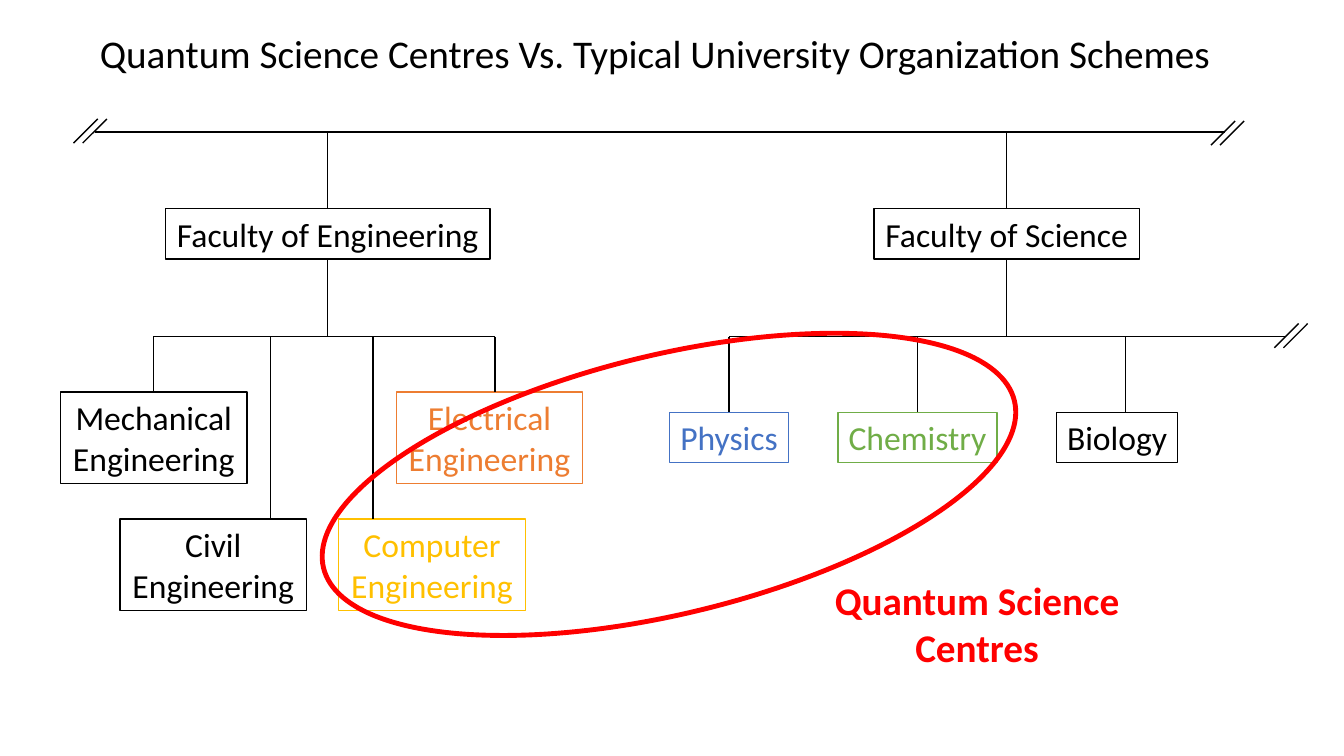
from lxml.etree import SubElement
from pptx import Presentation
from pptx.dml.color import RGBColor
from pptx.enum.shapes import MSO_CONNECTOR, MSO_SHAPE
from pptx.enum.text import MSO_ANCHOR, MSO_AUTO_SIZE, PP_ALIGN
from pptx.oxml.ns import qn
from pptx.util import Inches, Pt

BLACK, RED = "000000", "FF0000"
TOP, BOTTOM = 0, 2
UNIVERSITY_Y, FACULTY_Y, DEPARTMENT_Y = 1.31, 2.07, 3.34


def write(shape, text, size, color, align=PP_ALIGN.CENTER, bold=False, wrap=True):
    frame = shape.text_frame
    frame.text = text
    settings = {"word_wrap": wrap, "auto_size": MSO_AUTO_SIZE.NONE,
                "vertical_anchor": MSO_ANCHOR.TOP}
    for name, value in settings.items():
        setattr(frame, name, value)
    paragraph = frame.paragraphs[0]
    paragraph.alignment = align
    for name, value in {"name": "Calibri", "size": Pt(size), "bold": bold}.items():
        setattr(paragraph.font, name, value)
    paragraph.font.color.rgb = RGBColor.from_string(color)


def add_line(x1, y1, x2, y2):
    line = slide.shapes.add_connector(
        MSO_CONNECTOR.STRAIGHT, *[Inches(value) for value in (x1, y1, x2, y2)])
    line.line.color.rgb = RGBColor.from_string(BLACK)
    line.line.width = Pt(1)
    SubElement(line._element.spPr, qn("a:effectLst"))
    return line


presentation = Presentation()
presentation.slide_width, presentation.slide_height = Inches(13.33), Inches(7.5)
slide = presentation.slides.add_slide(presentation.slide_layouts[5])

title = slide.shapes.title
title.left, title.top = Inches(0.89), Inches(0.24)
title.width, title.height = Inches(11.33), Inches(0.57)
write(title, "Quantum Science Centres Vs. Typical University Organization Schemes",
      28, BLACK, align=PP_ALIGN.LEFT, wrap=False)

# Units: name, left, top, width, height, color, bar above, x of an off-centre drop
units = [
    ("Faculty of Engineering", 1.64, FACULTY_Y, 3.22, 0.5, BLACK, UNIVERSITY_Y, None),
    ("Faculty of Science", 8.67, FACULTY_Y, 2.63, 0.5, BLACK, UNIVERSITY_Y, None),
    ("Mechanical Engineering", 0.6, 3.89, 1.85, 0.91, BLACK, DEPARTMENT_Y, None),
    ("Civil Engineering", 1.19, 5.15, 1.85, 0.91, BLACK, DEPARTMENT_Y, 2.68),
    ("Computer Engineering", 3.36, 5.15, 1.85, 0.91, "FFC000", DEPARTMENT_Y, 3.7),
    ("Electrical Engineering", 3.93, 3.89, 1.85, 0.91, "ED7D31", DEPARTMENT_Y, 4.91),
    ("Physics", 6.64, 4.09, 1.18, 0.5, "4472C4", DEPARTMENT_Y, None),
    ("Chemistry", 8.31, 4.09, 1.58, 0.5, "70AD47", DEPARTMENT_Y, None),
    ("Biology", 10.48, 4.09, 1.2, 0.5, BLACK, DEPARTMENT_Y, 11.16),
]
for name, left, top, width, height, color, bar_y, drop_x in units:
    box = slide.shapes.add_shape(
        MSO_SHAPE.RECTANGLE, Inches(left), Inches(top), Inches(width), Inches(height))
    box.shadow.inherit = False
    box.fill.background()
    box.line.color.rgb = RGBColor.from_string(color)
    box.line.width = Pt(1)
    write(box, name, 24, color, wrap=height > 0.5)

    center = left + width / 2
    drop = add_line(drop_x or center, bar_y, drop_x or center, top)
    if drop_x is None:
        drop.end_connect(box, TOP)
    if top == FACULTY_Y:
        stem = add_line(center, top + height, center, DEPARTMENT_Y)
        stem.begin_connect(box, BOTTOM)

# Horizontal bars
for start, end, y in [(0.94, 12.15, UNIVERSITY_Y), (1.52, 4.91, DEPARTMENT_Y),
                      (7.23, 12.75, DEPARTMENT_Y)]:
    add_line(start, y, end, y)

# Double slashes where a bar continues
for x, y in [(0.73, 1.42), (12.01, 1.44), (12.64, 3.45)]:
    for shift in (0, 0.09):
        add_line(x + shift, y, x + shift + 0.24, y - 0.24)

ellipse = slide.shapes.add_shape(
    MSO_SHAPE.OVAL, Inches(3.11), Inches(3.52), Inches(7.05), Inches(2.57))
ellipse.rotation = 346.4
ellipse.shadow.inherit = False
ellipse.fill.background()
ellipse.line.color.rgb = RGBColor.from_string(RED)
ellipse.line.width = Pt(3.5)

centres_label = slide.shapes.add_textbox(
    Inches(7.82), Inches(5.67), Inches(3.74), Inches(1.04))
write(centres_label, "Quantum Science Centres", 28, RED, bold=True)

presentation.save("out.pptx")
